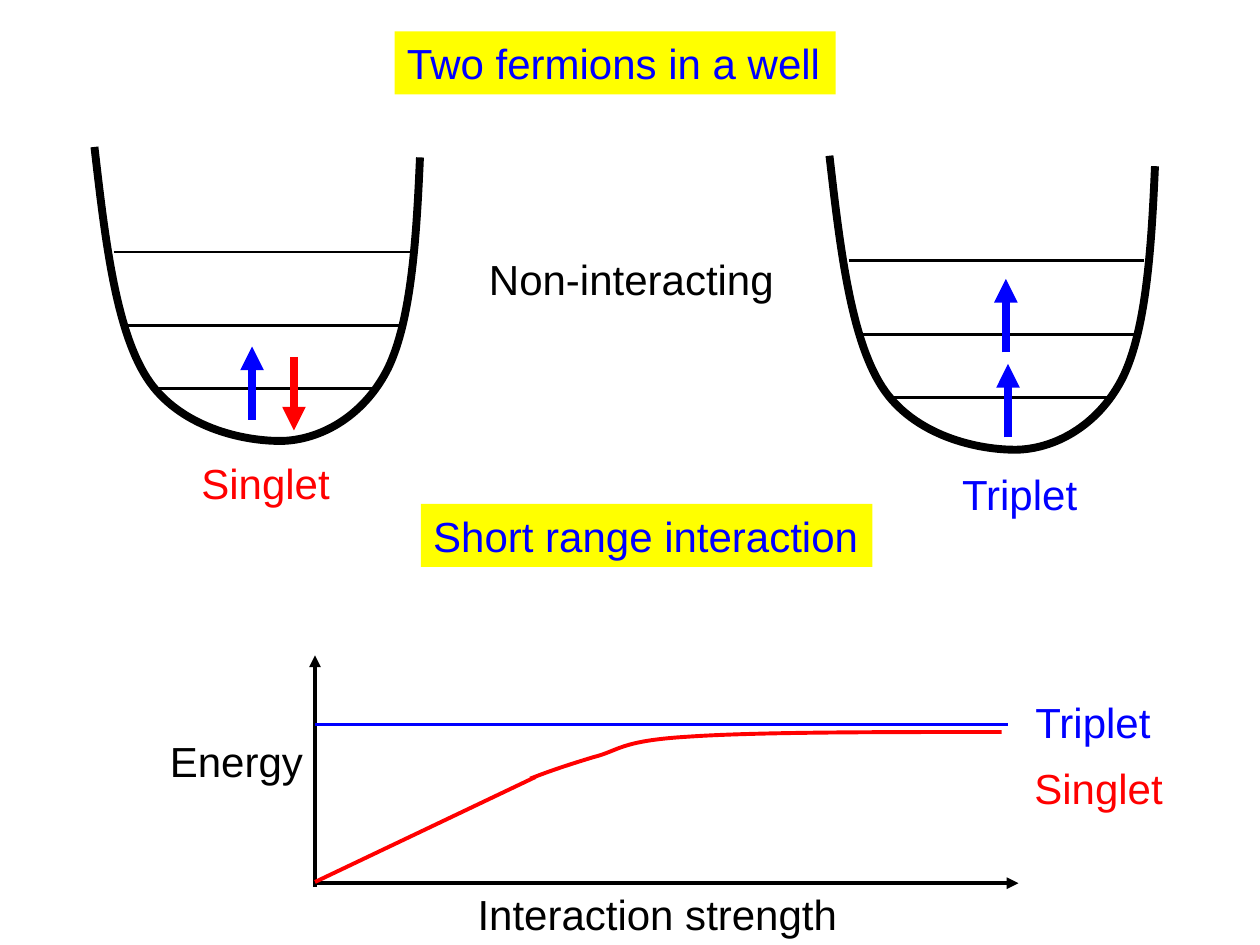
from dataclasses import dataclass

from lxml.etree import SubElement
from pptx import Presentation
from pptx.dml.color import RGBColor
from pptx.enum.shapes import MSO_CONNECTOR, MSO_SHAPE
from pptx.enum.text import MSO_ANCHOR, MSO_AUTO_SIZE, PP_ALIGN
from pptx.oxml.ns import qn
from pptx.util import Pt


@dataclass(frozen=True)
class Theme:
    font: str = "Arial"
    size: float = 24
    black: RGBColor = RGBColor(0, 0, 0)
    blue: RGBColor = RGBColor(0, 0, 255)
    red: RGBColor = RGBColor(255, 0, 0)
    yellow: RGBColor = RGBColor(255, 255, 0)
    thin: float = 1.5
    medium: float = 2.25
    thick: float = 4.5


# Start point, then two control points and an end point per segment
WELL = [(0, 0), (6, 52), (12, 104), (30, 132), (48, 160), (85, 168.5), (108, 168),
        (131, 167), (155, 152.5), (168, 126), (181, 98.5), (184, 52.5), (186, 6)]
LEVELS = [(36, 162, 138), (18, 174, 102), (11, 180, 60)]  # left, right, depth
SATURATION = [(303, 445), (314, 440.6), (325, 437), (339, 432.7), (354, 429),
              (354, 423.4), (393, 421), (432, 418.3), (502.6, 418.3), (572.4, 418.3)]


class Sketch:
    def __init__(self, slide, theme):
        self.s = slide
        self.t = theme

    def _write(self, sp, text, color):
        tf = sp.text_frame
        tf.word_wrap = False
        tf.auto_size = MSO_AUTO_SIZE.SHAPE_TO_FIT_TEXT
        tf.vertical_anchor = MSO_ANCHOR.TOP
        p = tf.paragraphs[0]
        p.text = text
        p.alignment = PP_ALIGN.LEFT
        p.font.name = self.t.font
        p.font.size = Pt(self.t.size)
        p.font.color.rgb = color

    def label(self, text, x, y, w, color):
        sp = self.s.shapes.add_textbox(Pt(x), Pt(y), Pt(w), Pt(36))
        self._write(sp, text, color)

    def heading(self, text, x, y, w):
        sp = self.s.shapes.add_shape(MSO_SHAPE.RECTANGLE, Pt(x), Pt(y), Pt(w), Pt(36))
        sp.shadow.inherit = False
        sp.fill.solid()
        sp.fill.fore_color.rgb = self.t.yellow
        sp.line.fill.background()
        self._write(sp, text, self.t.blue)

    def line(self, start, end, color, width, arrow=False):
        c = self.s.shapes.add_connector(
            MSO_CONNECTOR.STRAIGHT, *(Pt(v) for v in (*start, *end)))
        c.line.color.rgb = color
        c.line.width = Pt(width)
        if arrow:
            SubElement(c.line._get_or_add_ln(), qn("a:tailEnd"), type="triangle")
        SubElement(c._element.spPr, qn("a:effectLst"))

    def curve(self, points, color, width):
        """Draw a chain of cubic Bézier segments."""
        (x, y), *rest = [(Pt(px), Pt(py)) for px, py in points]
        builder = self.s.shapes.build_freeform(x, y)
        builder.add_line_segments(rest, close=False)
        sp = builder.convert_to_shape()
        path = sp._element.find(".//" + qn("a:path"))
        steps = path.findall(qn("a:lnTo"))
        for i in range(0, len(steps), 3):
            bezier = SubElement(path, qn("a:cubicBezTo"))
            for step in steps[i:i + 3]:
                bezier.append(step[0])
                path.remove(step)
        sp.shadow.inherit = False
        sp.fill.background()
        sp.line.color.rgb = color
        sp.line.width = Pt(width)

    def well(self, x, y):
        t = self.t
        self.curve([(x + dx, y + dy) for dx, dy in WELL], t.black, t.thick)
        for left, right, depth in LEVELS:
            self.line((x + left, y + depth), (x + right, y + depth), t.black, t.thin)

    def spin(self, x, y, color, up=True):
        ends = [(x, y + 42), (x, y)]
        self.line(*(ends if up else ends[::-1]), color, self.t.thick, arrow=True)


def main():
    prs = Presentation()
    prs.slide_width, prs.slide_height = Pt(720), Pt(540)
    t = Theme()
    sk = Sketch(prs.slides.add_slide(prs.slide_layouts[6]), t)

    sk.heading("Two fermions in a well", 225.5, 18, 252)
    sk.well(54, 84)
    sk.spin(144, 198, t.blue)
    sk.spin(168, 204, t.red, up=False)
    sk.well(474, 89)
    sk.label("Non-interacting", 272.3, 141.5, 178, t.black)
    sk.label("Singlet", 108, 258, 88, t.red)
    sk.label("Triplet", 542.7, 264, 81, t.blue)
    sk.spin(576, 208, t.blue)
    sk.spin(574.8, 159.4, t.blue)

    sk.line((180, 507), (180, 374.5), t.black, t.medium, arrow=True)
    sk.line((180.5, 504.7), (582, 504.7), t.black, t.medium, arrow=True)
    sk.label("Energy", 90, 417, 91, t.black)
    sk.label("Interaction strength", 265.8, 504, 220, t.black)
    sk.line((180, 414), (576, 414), t.blue, t.medium)
    sk.line((180, 504), (306, 444), t.red, t.medium)
    sk.label("Triplet", 584.6, 394.5, 81, t.blue)
    sk.label("Singlet", 584, 432, 88, t.red)
    sk.heading("Short range interaction", 240.5, 288, 258)
    sk.curve(SATURATION, t.red, t.medium)

    prs.save("out.pptx")


if __name__ == "__main__":
    main()
